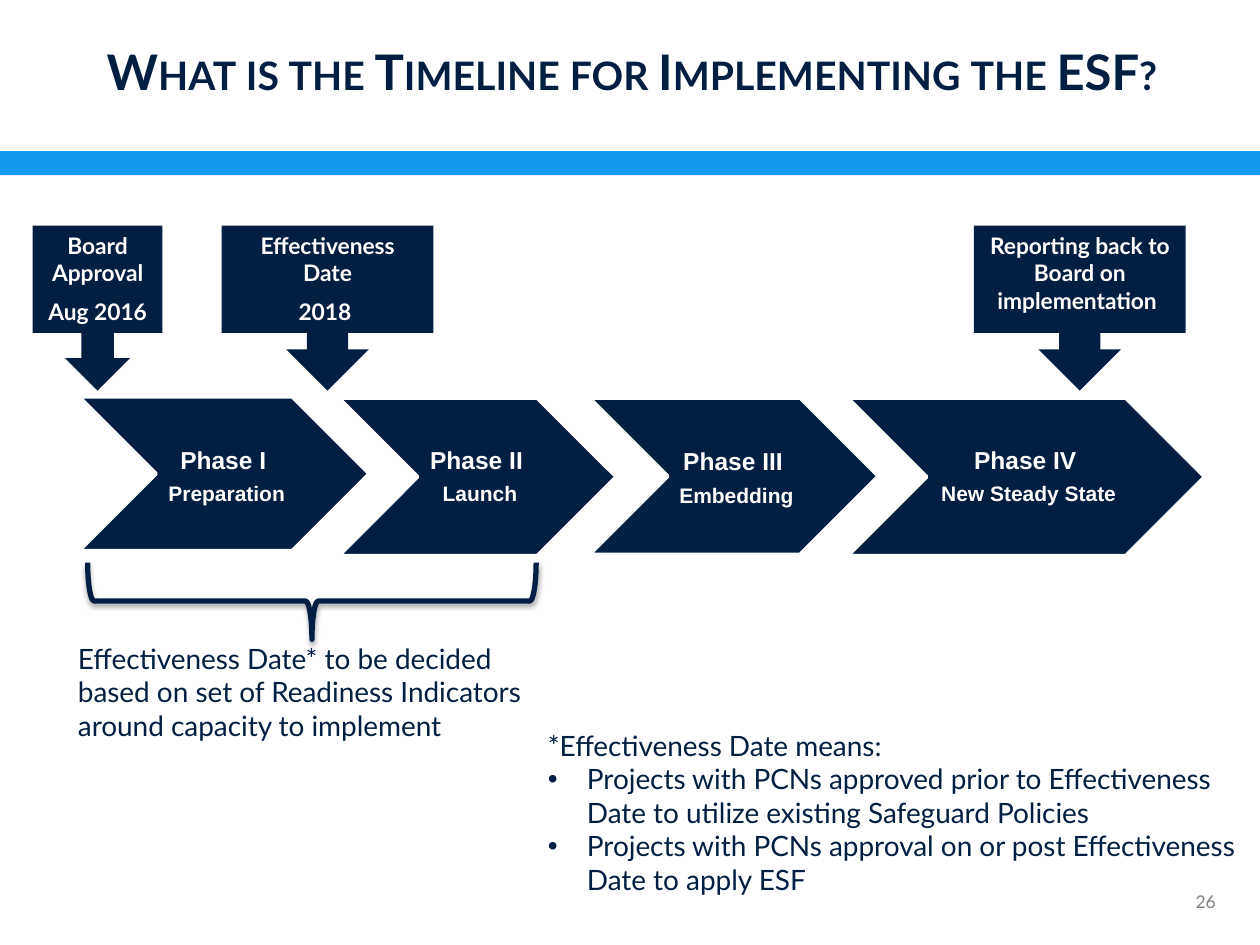
"""Build the slide on the timeline for implementing the ESF."""
import lxml.etree
import pptx
import pptx.dml.color
import pptx.enum.shapes
import pptx.enum.text
import pptx.oxml.ns
import pptx.util

Inches, Pt = pptx.util.Inches, pptx.util.Pt
SHAPE = pptx.enum.shapes.MSO_SHAPE
ALIGN = pptx.enum.text.PP_ALIGN
ANCHOR = pptx.enum.text.MSO_ANCHOR
NAVY, BLUE, WHITE, GRAY = "021F43", "139AF0", "FFFFFF", "7F7F7F"

PHASES = [
    (0.63, 3.15, 2.3, 1.22, 0.06, "Phase I \nPreparation"),
    (2.69, 3.16, 2.2, 1.25, 0, "Phase II \nLaunch"),
    (4.68, 3.16, 2.29, 1.24, 0.04, "Phase III \nEmbedding"),
    (6.73, 3.16, 2.83, 1.25, 0, "Phase IV \nNew Steady State"),
]
EVENTS = [
    (0.26, 1.03, "Board Approval\nAug 2016"),
    (1.76, 1.68, "Effectiveness\nDate\n2018 "),
    (7.73, 1.68, "Reporting back to Board on implementation "),
]
SCOPE = ("Effectiveness Date* to be decided based on set of Readiness Indicators "
         "around capacity to implement")
NOTE = "\n".join([
    "*Effectiveness Date means:",
    "Projects with PCNs approved prior to Effectiveness Date to utilize existing Safeguard Policies",
    "Projects with PCNs approval on or post Effectiveness Date to apply ESF",
])


def color(code):
    return pptx.dml.color.RGBColor.from_string(code)


def add_node(parent, tag, **attrs):
    return lxml.etree.SubElement(parent, pptx.oxml.ns.qn(tag), attrs)


def set_text(frame, text, size, code, font="Lato", bold=False,
             align=ALIGN.LEFT, anchor=ANCHOR.TOP, inset=(0.1, 0.05, 0.1, 0.05)):
    frame.text = text
    frame.word_wrap = True
    frame.vertical_anchor = anchor
    (frame.margin_left, frame.margin_top,
     frame.margin_right, frame.margin_bottom) = map(Inches, inset)
    for line in frame.paragraphs:
        line.alignment = align
        for run in line.runs:
            run.font.name = font
            run.font.size = Pt(size)
            run.font.bold = bold
            run.font.color.rgb = color(code)
    return frame.paragraphs


def add_text(slide, box, text, size, code, **style):
    frame = slide.shapes.add_textbox(*map(Inches, box)).text_frame
    return set_text(frame, text, size, code, **style)


def add_shape(slide, kind, box, fill=None, line=None, width=1):
    shape = slide.shapes.add_shape(kind, *map(Inches, box))
    shape.shadow.inherit = False
    if fill:
        shape.fill.solid()
        shape.fill.fore_color.rgb = color(fill)
    else:
        shape.fill.background()
    if line:
        shape.line.color.rgb = color(line)
        shape.line.width = Pt(width)
    else:
        shape.line.fill.background()
    return shape


def add_phase(slide, left, top, width, height, drop, text):
    shape = add_shape(slide, SHAPE.CHEVRON, (left, top, width, height), NAVY, WHITE, 2)
    lines = set_text(shape.text_frame, text, 14, WHITE, font="Arial", bold=True,
                     align=ALIGN.CENTER, anchor=ANCHOR.MIDDLE,
                     inset=(0.06, 0.02 + drop, 0.02, 0.02))
    for line in lines:
        line.line_spacing = 0.9
        line.space_after = Pt(5)
    lines[1].runs[0].font.size = Pt(12)


def add_event(slide, left, width, text):
    shape = add_shape(slide, SHAPE.DOWN_ARROW_CALLOUT, (left, 1.79, width, 1.31), NAVY)
    lines = set_text(shape.text_frame, text, 13, WHITE, bold=True, align=ALIGN.CENTER)
    if len(lines) > 1:
        lines[-1].space_before = Pt(6.5)


def add_brace(slide):
    shape = add_shape(slide, SHAPE.RIGHT_BRACE, (2.17, 2.99, 0.61, 3.56), line=NAVY, width=3)
    shape.rotation = 90
    effects = shape._element.spPr.find(pptx.oxml.ns.qn("a:effectLst"))
    shade = add_node(effects, "a:outerShdw", blurRad=str(Pt(3.1)), dist=str(Pt(1.8)),
                     dir="5400000", rotWithShape="0")
    tint = add_node(shade, "a:srgbClr", val="000000")
    add_node(tint, "a:alpha", val="35000")


def add_bullet(line):
    props = line._p.get_or_add_pPr()
    props.set("marL", str(Inches(0.31)))
    props.set("indent", str(-Inches(0.31)))
    add_node(props, "a:buFont", typeface="Arial")
    add_node(props, "a:buChar", char="•")


def add_title(slide):
    lines = add_text(slide, (0.39, 0.25, 9.25, 0.55),
                     "What is the Timeline for Implementing the ESF?", 28, NAVY, bold=True,
                     align=ALIGN.CENTER, anchor=ANCHOR.BOTTOM, inset=(0, 0, 0, 0))
    lines[0].runs[0]._r.get_or_add_rPr().set("cap", "small")


def main():
    deck = pptx.Presentation()
    deck.slide_width, deck.slide_height = Inches(10), Inches(7.5)
    slide = deck.slides.add_slide(deck.slide_layouts[6])
    add_shape(slide, SHAPE.RECTANGLE, (0, 1.2, 10, 0.19), BLUE)
    add_text(slide, (0.52, 5.04, 3.98, 0.91), SCOPE, 16, NAVY)
    for line in add_text(slide, (4.25, 5.73, 5.71, 1.45), NOTE, 16, NAVY)[1:]:
        add_bullet(line)
    for phase in PHASES:
        add_phase(slide, *phase)
    for event in EVENTS:
        add_event(slide, *event)
    add_title(slide)
    add_brace(slide)
    add_text(slide, (9.05, 6.96, 0.6, 0.39), "26", 10, GRAY, align=ALIGN.RIGHT,
             anchor=ANCHOR.MIDDLE, inset=(0, 0, 0, 0))
    deck.save("out.pptx")


if __name__ == "__main__":
    main()
